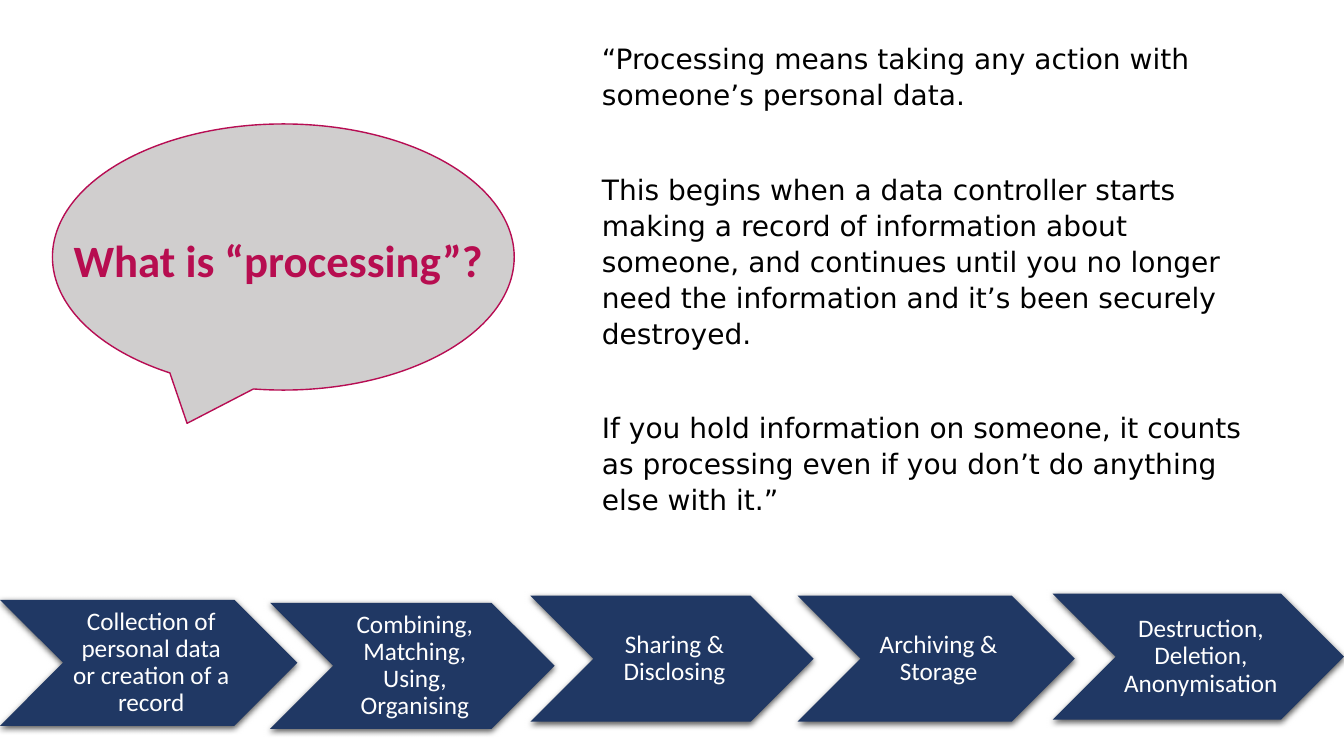
import pptx
import pptx.util
import pptx.dml.color
import pptx.enum.shapes
import pptx.enum.text
import pptx.oxml.ns
from lxml import etree

Inches = pptx.util.Inches
RGBColor = pptx.dml.color.RGBColor
SHAPE = pptx.enum.shapes.MSO_SHAPE
ALIGN = pptx.enum.text.PP_ALIGN
ANCHOR = pptx.enum.text.MSO_ANCHOR
qn = pptx.oxml.ns.qn

NAVY = RGBColor(0x20, 0x38, 0x64)
GREY = RGBColor(0xD0, 0xCE, 0xCE)
CRIMSON = RGBColor(0xB7, 0x0D, 0x53)
TITLE_RED = RGBColor(0xB7, 0x0D, 0x50)
BLACK = RGBColor(0, 0, 0)
WHITE = RGBColor(255, 255, 255)

QUOTE = [
    "“Processing means taking any action with someone’s personal data.",
    "This begins when a data controller\u00a0starts making a record of information about "
    "someone, and continues until you no longer need the information and it’s been "
    "securely destroyed.",
    "If you hold information on someone, it counts as processing even if you don’t do "
    "anything else with it.”",
]
STAGES = [
    ("Collection of personal data or creation of a record", 0, 5.95, 2.95),
    ("Combining, Matching, Using, Organising", 2.68, 5.98, 2.82),
    ("Sharing & Disclosing", 5.26, 5.91, 2.81),
    ("Archiving & Storage", 7.91, 5.91, 2.75),
    ("Destruction, Deletion, Anonymisation", 10.44, 5.89, 2.89),
]
STAGE_HEIGHT = 1.25


def place(sp, x, y, w, h):
    sp.left, sp.top, sp.width, sp.height = (Inches(v) for v in (x, y, w, h))


def write(sp, paragraphs, size, color, font="Calibri", bold=False, align=ALIGN.LEFT,
          anchor=ANCHOR.TOP, spacing=1.07, after=8, insets=(0.1, 0.05, 0.1, 0.05)):
    tf = sp.text_frame
    tf.word_wrap = True
    tf.auto_size = pptx.enum.text.MSO_AUTO_SIZE.NONE
    tf.vertical_anchor = anchor
    tf.margin_left, tf.margin_top, tf.margin_right, tf.margin_bottom = map(Inches, insets)
    for i, text in enumerate(paragraphs):
        p = tf.add_paragraph() if i else tf.paragraphs[0]
        p.alignment = align
        p.line_spacing = spacing
        p.space_before = pptx.util.Pt(0)
        p.space_after = pptx.util.Pt(after)
        r = p.add_run()
        r.text = text
        r.font.name = font
        r.font.size = pptx.util.Pt(size)
        r.font.bold = bold
        r.font.color.rgb = color


def add_filled(s, kind, x, y, w, h, fill):
    sp = s.shapes.add_shape(kind, *(Inches(v) for v in (x, y, w, h)))
    sp.shadow.inherit = False
    sp.fill.solid()
    sp.fill.fore_color.rgb = fill
    return sp


def add_soft_shadow(sp):
    effects = sp.element.spPr.find(qn("a:effectLst"))
    shadow = etree.SubElement(effects, qn("a:outerShdw"), blurRad="57150", dist="19050",
                              dir="5400000", algn="ctr", rotWithShape="0")
    color = etree.SubElement(shadow, qn("a:srgbClr"), val=str(BLACK))
    etree.SubElement(color, qn("a:alpha"), val="63000")


def add_quote(s, x, y, w, h):
    body = s.placeholders[1]
    place(body, x, y, w, h)
    write(body, QUOTE, 20, BLACK, font="DejaVu Sans", after=42)
    for p in body.text_frame.paragraphs:
        pPr = p._p.get_or_add_pPr()
        pPr.set("marL", "0")
        pPr.set("indent", "0")
        etree.SubElement(pPr, qn("a:buNone"))


def add_question(s, x, y, w, h):
    bubble = add_filled(s, SHAPE.OVAL_CALLOUT, x, y, w, h, GREY)
    bubble.line.color.rgb = CRIMSON
    bubble.line.width = pptx.util.Pt(1)
    title = s.shapes.title
    place(title, x + 0.11, y + 0.99, w - 0.22, 0.65)
    write(title, ["What is “processing”?"], 32, TITLE_RED, bold=True)
    bubble.element.addnext(title.element)


def add_stage(s, text, x, y, w, h):
    sp = add_filled(s, SHAPE.CHEVRON, x, y, w, h, NAVY)
    sp.line.fill.background()
    add_soft_shadow(sp)
    write(sp, [text], 18, WHITE, align=ALIGN.CENTER, anchor=ANCHOR.MIDDLE,
          spacing=0.9, after=0, insets=(0.08, 0.03, 0.03, 0.03))


def main():
    prs = pptx.Presentation()
    prs.slide_width = Inches(13.33)
    prs.slide_height = Inches(7.5)
    s = prs.slides.add_slide(prs.slide_layouts[1])
    add_quote(s, 5.87, 0.34, 6.84, 5.29)
    for text, x, y, w in STAGES:
        add_stage(s, text, x, y, w, STAGE_HEIGHT)
    add_question(s, 0.52, 1.23, 4.58, 2.64)
    prs.save("out.pptx")


if __name__ == "__main__":
    main()
